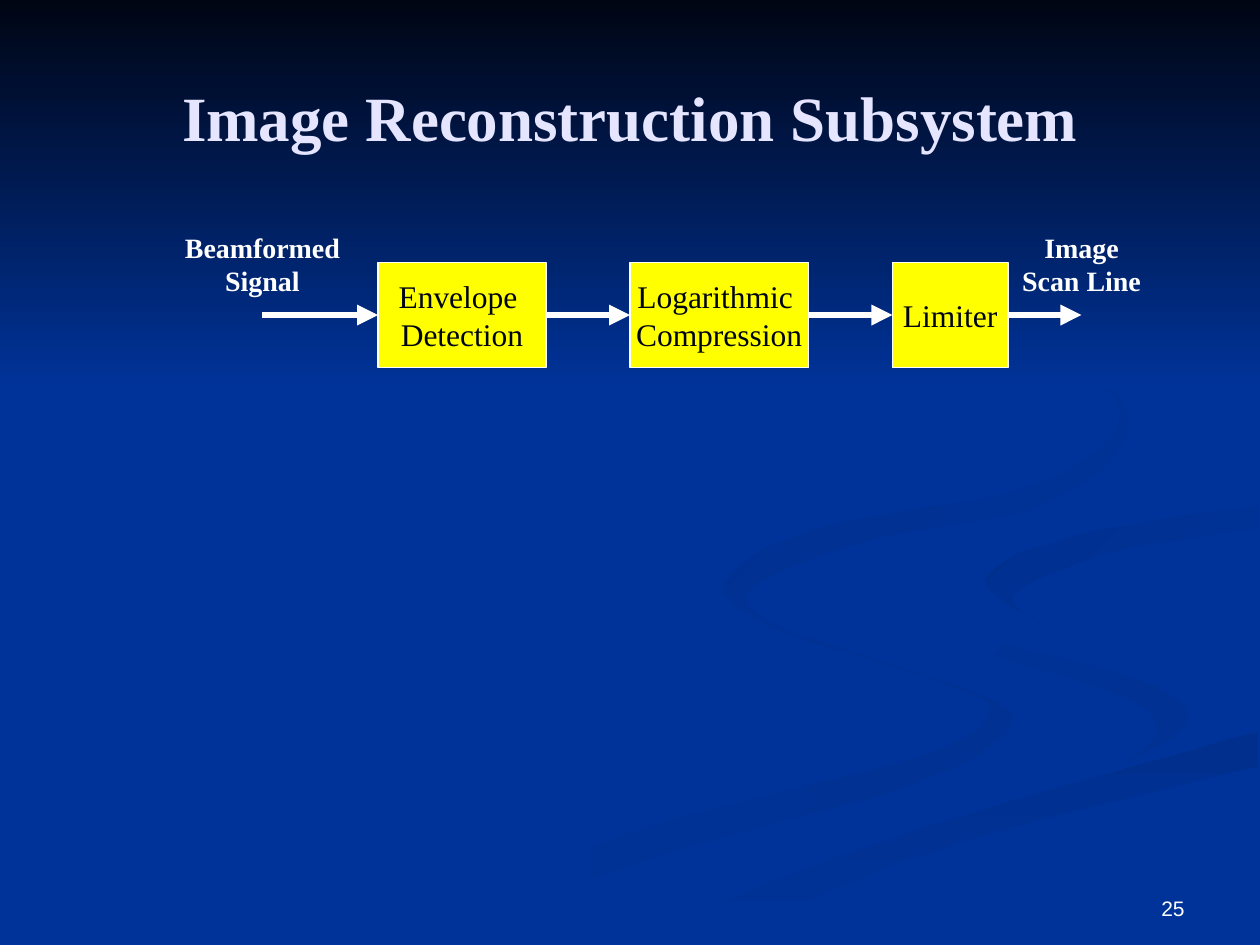
from lxml import etree
from pptx import Presentation
from pptx.dml.color import RGBColor
from pptx.enum.shapes import MSO_CONNECTOR, MSO_SHAPE
from pptx.enum.text import MSO_ANCHOR, PP_ALIGN
from pptx.oxml.ns import qn
from pptx.util import Pt

RECT = MSO_SHAPE.RECTANGLE
STRAIGHT = MSO_CONNECTOR.STRAIGHT
CENTER, RIGHT = PP_ALIGN.CENTER, PP_ALIGN.RIGHT
TOP, MIDDLE, BOTTOM = MSO_ANCHOR.TOP, MSO_ANCHOR.MIDDLE, MSO_ANCHOR.BOTTOM
LEFT_SIDE, RIGHT_SIDE = 1, 3
SERIF, SANS = "Times New Roman", "Arial"

COLORS = {
    "blue": "003399",
    "soft": "003193",
    "deep": "002F8E",
    "night": "000514",
    "title": "E5E5FF",
    "white": "FFFFFF",
    "yellow": "FFFF00",
}

# Start colour, end colour, clockwise angle, and the two edges from tip to tip
RIBBONS = [
    ("blue", "soft", 0,
     [(414, 331), (442, 357), (562, 398), (575, 418), (519, 449), (359, 495), (260, 539)],
     [(410, 337), (440, 359), (541, 391), (565, 408), (523, 433), (359, 476), (216, 539)]),
    ("blue", "soft", 45,
     [(521, 334), (546, 359), (652, 389), (679, 412), (644, 436)],
     [(521, 334), (552, 369), (642, 398), (661, 418), (644, 436)]),
    ("deep", "blue", 90,
     [(362, 539), (454, 499), (574, 459), (719, 418)],
     [(411, 539), (500, 498), (591, 469), (719, 438)]),
    ("deep", "blue", 45,
     [(719, 289), (611, 307), (563, 331), (595, 357)],
     [(719, 302), (632, 316), (580, 340), (595, 357)]),
    ("deep", "blue", 45,
     [(549, 168), (622, 210), (644, 248), (594, 289), (492, 310), (427, 338), (448, 360)],
     [(549, 168), (609, 201), (640, 241), (589, 278), (467, 302), (415, 333), (448, 360)]),
]
CURVE_STEPS = 6

BOX_TOP, BOX_HEIGHT = 150, 60
FLOW_Y = BOX_TOP + BOX_HEIGHT / 2
FLOW_START, FLOW_END = 150, 618
# left, width, lines
STAGES = [
    (216, 96, ["Envelope ", "Detection"]),
    (360, 102, ["Logarithmic ", "Compression"]),
    (510, 66, ["Limiter"]),
]


def rgb(name):
    return RGBColor.from_string(COLORS[name])


def write(tf, lines, size, color, font=SERIF, bold=False, align=CENTER,
          anchor=TOP, wrap=True):
    tf.word_wrap = wrap
    tf.vertical_anchor = anchor
    for i, line in enumerate(lines):
        p = tf.add_paragraph() if i else tf.paragraphs[0]
        p.alignment = align
        r = p.add_run()
        r.text = line
        r.font.name, r.font.size, r.font.bold = font, Pt(size), bold
        r.font.color.rgb = rgb(color)


def smooth(knots):
    """Return points on a Catmull-Rom curve through the knots."""
    padded = [knots[0]] + knots + [knots[-1]]
    points = []
    for quad in zip(padded, padded[1:], padded[2:], padded[3:]):
        for step in range(CURVE_STEPS):
            t = step / CURVE_STEPS
            points.append(tuple(
                b + t * (c - a) / 2
                + t ** 2 * (2 * a - 5 * b + 4 * c - d) / 2
                + t ** 3 * (3 * b - a - 3 * c + d) / 2
                for a, b, c, d in zip(*quad)))
    return points + [knots[-1]]


def paint_gradient(sp, start, end, angle):
    """Fill with a two-stop gradient; angle runs clockwise in degrees."""
    sp.shadow.inherit = False
    sp.line.fill.background()
    sp.fill.gradient()
    sp.fill.gradient_angle = (360 - angle) % 360
    for stop, color in zip(sp.fill.gradient_stops, (start, end)):
        stop.color.rgb = rgb(color)


def add_ribbon(s, start, end, angle, edge, other_edge):
    outline = smooth(edge) + smooth(other_edge)[::-1]
    builder = s.shapes.build_freeform(*outline[0], scale=Pt(1))
    builder.add_line_segments(outline[1:], close=True)
    paint_gradient(builder.convert_to_shape(), start, end, angle)


def add_backdrop(s):
    s.background.fill.solid()
    s.background.fill.fore_color.rgb = rgb("blue")
    for ribbon in RIBBONS:
        add_ribbon(s, *ribbon)
    band = s.shapes.add_shape(RECT, Pt(0), Pt(0), Pt(720), Pt(222))
    paint_gradient(band, "night", "blue", 90)


def add_title(s, text):
    """Place the title above the backdrop in the drawing order."""
    sp = s.shapes.title
    sp.element.getparent().append(sp.element)
    sp.left, sp.top, sp.width, sp.height = Pt(36), Pt(21.6), Pt(648), Pt(90)
    write(sp.text_frame, [text], 36, "title", bold=True, anchor=MIDDLE)


def add_stage(s, left, width, lines):
    sp = s.shapes.add_shape(RECT, Pt(left), Pt(BOX_TOP), Pt(width), Pt(BOX_HEIGHT))
    sp.shadow.inherit = False
    sp.fill.solid()
    sp.fill.fore_color.rgb = rgb("yellow")
    sp.line.color.rgb = rgb("white")
    sp.line.width = Pt(0.75)
    write(sp.text_frame, lines, 18, "night", anchor=MIDDLE, wrap=False)
    return sp


def add_text(s, left, top, width, height, text, size, **style):
    sp = s.shapes.add_textbox(Pt(left), Pt(top), Pt(width), Pt(height))
    write(sp.text_frame, [text], size, "white", **style)


def add_arrow(s, source, target):
    """Draw a flow arrow; a missing source or target leaves that end free."""
    line = s.shapes.add_connector(
        STRAIGHT, Pt(FLOW_START), Pt(FLOW_Y), Pt(FLOW_END), Pt(FLOW_Y))
    if source is not None:
        line.begin_connect(source, RIGHT_SIDE)
    if target is not None:
        line.end_connect(target, LEFT_SIDE)
    line.line.color.rgb = rgb("white")
    line.line.width = Pt(4)
    properties = line.element.spPr
    etree.SubElement(properties.get_or_add_ln(), qn("a:tailEnd"), type="triangle")
    etree.SubElement(properties, qn("a:effectLst"))


def main():
    prs = Presentation()
    prs.slide_width, prs.slide_height = Pt(720), Pt(540)
    s = prs.slides.add_slide(prs.slide_layouts[5])
    add_backdrop(s)
    add_title(s, "Image Reconstruction Subsystem")
    stages = [add_stage(s, *stage) for stage in STAGES]
    add_text(s, 96, 128, 108, 46, "Beamformed Signal", 16, bold=True)
    add_text(s, 576, 128, 84, 46, "Image Scan Line", 16, bold=True)
    add_text(s, 516, 492, 168, 37.5, "25", 12, font=SANS, align=RIGHT, anchor=BOTTOM)
    for source, target in zip([None] + stages, stages + [None]):
        add_arrow(s, source, target)
    prs.save("out.pptx")


if __name__ == "__main__":
    main()
